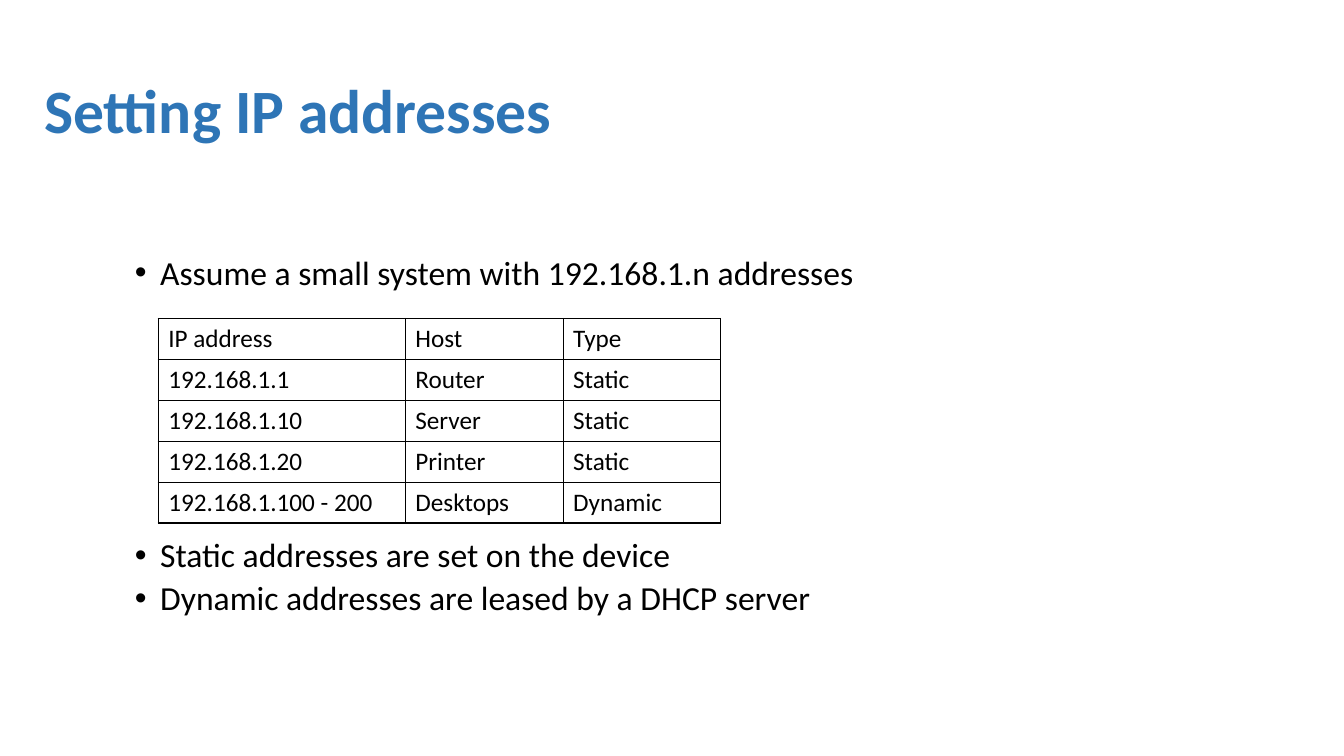
"""Build the slide on setting static and dynamic IP addresses."""
from lxml import etree
from pptx import Presentation
from pptx import util as u
from pptx.dml.color import RGBColor
from pptx.enum import text
from pptx.oxml.ns import qn

COLORS = {"heading": "2E75B6", "ink": "000000", "paper": "FFFFFF"}
HEADING = {"name": "Calibri", "size": u.Pt(44), "bold": True}
BODY = {"name": "Calibri", "size": u.Pt(24)}
CELL = {"name": "Calibri", "size": u.Pt(18), "bold": False}

deck = Presentation()
deck.slide_width, deck.slide_height = u.Inches(13.33), u.Inches(7.5)
slide = deck.slides.add_slide(deck.slide_layouts[6])


def write(paragraph, words, style, color):
    run = paragraph.add_run()
    run.text = words
    for key, value in style.items():
        setattr(run.font, key, value)
    run.font.color.rgb = RGBColor.from_string(COLORS[color])


def add_frame(left, top, width, height, anchor):
    box = slide.shapes.add_textbox(*map(u.Inches, (left, top, width, height)))
    box.text_frame.word_wrap = True
    box.text_frame.vertical_anchor = anchor
    return box.text_frame


heading = add_frame(0.34, 0.4, 12.68, 1.45, text.MSO_ANCHOR.MIDDLE).paragraphs[0]
heading.line_spacing = 0.9
write(heading, "Setting IP addresses", HEADING, "heading")

points = [
    ("Assume a small system with 192.168.1.n addresses", 0),
    ("Static addresses are set on the device", 176),
    ("Dynamic addresses are leased by a DHCP server", 5),
]
body = add_frame(0.74, 2.49, 10.71, 4.58, text.MSO_ANCHOR.TOP)
for index, (words, gap) in enumerate(points):
    point = body.add_paragraph() if index else body.paragraphs[0]
    point.line_spacing, point.space_before = 0.9, u.Pt(gap)
    props = point._p.get_or_add_pPr()
    props.set("marL", str(u.Inches(0.75)))
    props.set("indent", str(u.Inches(-0.25)))
    bullet_color = etree.SubElement(props, qn("a:buClr"))
    etree.SubElement(bullet_color, qn("a:srgbClr"), val=COLORS["ink"])
    etree.SubElement(props, qn("a:buFont"), typeface="Arial")
    etree.SubElement(props, qn("a:buChar"), char="•")
    write(point, words, BODY, "ink")

hosts = [
    ("IP address", "Host", "Type"),
    ("192.168.1.1", "Router", "Static"),
    ("192.168.1.10", "Server", "Static"),
    ("192.168.1.20", "Printer", "Static"),
    ("192.168.1.100 - 200", "Desktops", "Dynamic"),
]
widths = [2.45, 1.565, 1.565]
row_height = u.Inches(2.03 / len(hosts))
addresses = slide.shapes.add_table(
    len(hosts), len(widths), u.Inches(1.57), u.Inches(3.16),
    u.Inches(sum(widths)), row_height * len(hosts)).table
addresses.first_row = addresses.horz_banding = False
for column, width in zip(addresses.columns, widths):
    column.width = u.Inches(width)

for row, host in zip(addresses.rows, hosts):
    row.height = row_height
    for cell, words in zip(row.cells, host):
        write(cell.text_frame.paragraphs[0], words, CELL, "ink")
        cell_props = cell._tc.get_or_add_tcPr()
        for side in ("a:lnL", "a:lnR", "a:lnT", "a:lnB"):
            border = etree.SubElement(cell_props, qn(side), w=str(u.Pt(1)))
            ink = etree.SubElement(border, qn("a:solidFill"))
            etree.SubElement(ink, qn("a:srgbClr"), val=COLORS["ink"])
        cell.fill.solid()
        cell.fill.fore_color.rgb = RGBColor.from_string(COLORS["paper"])

deck.save("out.pptx")
